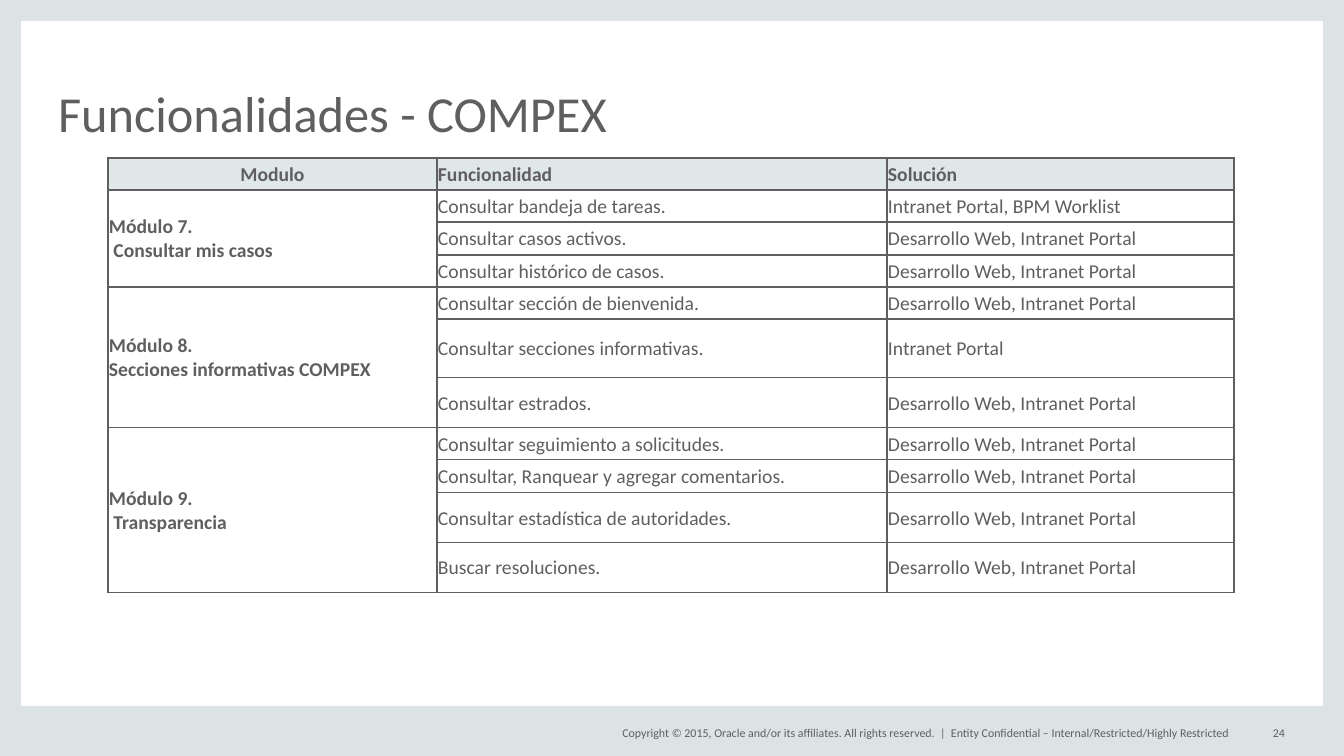
from copy import deepcopy

from lxml import etree
from pptx import Presentation
from pptx import util as u
from pptx.dml.color import RGBColor
from pptx.enum import shapes, text
from pptx.oxml import ns

PX = 914400 / 100.8
WIDTH, HEIGHT = 1344, 756
FONT = "Calibri"
COLORS = {"text": "5F5F5F", "frame": "DCE3E4", "header": "DFE7E9"}

PORTAL = "Intranet Portal"
WEB_PORTAL = f"Desarrollo Web, {PORTAL}"
HEADINGS = ["Modulo", "Funcionalidad", "Solución"]
# Module, then its functions as (function, solution, row height)
MODULES = [
    ("Módulo 7.\v Consultar mis casos", [
        ("Consultar bandeja de tareas.", f"{PORTAL}, BPM Worklist", 32),
        ("Consultar casos activos.", WEB_PORTAL, 33),
        ("Consultar histórico de casos.", WEB_PORTAL, 32),
    ]),
    ("Módulo 8.\vSecciones informativas COMPEX", [
        ("Consultar sección de bienvenida.", WEB_PORTAL, 32),
        ("Consultar secciones informativas.", PORTAL, 59),
        ("Consultar estrados.", WEB_PORTAL, 50),
    ]),
    ("Módulo 9.\v Transparencia", [
        ("Consultar seguimiento a solicitudes.", WEB_PORTAL, 32),
        ("Consultar, Ranquear y agregar comentarios.", WEB_PORTAL, 33),
        ("Consultar estadística de autoridades.", WEB_PORTAL, 50),
        ("Buscar resoluciones.", WEB_PORTAL, 50),
    ]),
]


def px(*lengths):
    return [u.Emu(round(length * PX)) for length in lengths]


def color(name):
    return RGBColor.from_string(COLORS[name])


def write(frame, content, size=14, bold=False, align=text.PP_ALIGN.LEFT, spacing=None):
    para = frame.paragraphs[0]
    para.text = content
    para.alignment = align
    if spacing:
        para.line_spacing = spacing
    for span in para.runs:
        span.font.name = FONT
        span.font.size = u.Pt(size)
        span.font.bold = bold
        span.font.color.rgb = color("text")
    # Line breaks take the same size as the words around them
    for line_break in para._p.findall(ns.qn("a:br")):
        line_break.append(deepcopy(para.runs[0]._r.rPr))


def set_frame(frame, anchor, wrap):
    frame.auto_size = text.MSO_AUTO_SIZE.NONE
    frame.word_wrap = wrap
    frame.vertical_anchor = anchor
    frame.margin_left = frame.margin_right = frame.margin_top = frame.margin_bottom = 0


def add_band(page, *place):
    band = page.shapes.add_shape(shapes.MSO_SHAPE.RECTANGLE, *px(*place))
    band.shadow.inherit = False
    band.fill.solid()
    band.fill.fore_color.rgb = color("frame")
    band.line.fill.background()


def add_title(page, content):
    title = page.shapes.title
    title.left, title.top, title.width, title.height = px(58, 44, 1227, 98)
    set_frame(title.text_frame, text.MSO_ANCHOR.BOTTOM, True)
    write(title.text_frame, content, size=36, spacing=0.8)


def add_footer(page, content, left, width, align=text.PP_ALIGN.LEFT):
    box = page.shapes.add_textbox(*px(left, 723, width, 20))
    set_frame(box.text_frame, text.MSO_ANCHOR.MIDDLE, False)
    write(box.text_frame, content, size=8.5, align=align)


def add_borders(cell):
    props = cell._tc.get_or_add_tcPr()
    for index, side in enumerate(("lnL", "lnR", "lnT", "lnB")):
        line = etree.Element(ns.qn(f"a:{side}"), w=str(u.Pt(1)))
        fill = etree.SubElement(line, ns.qn("a:solidFill"))
        etree.SubElement(fill, ns.qn("a:srgbClr"), val=COLORS["text"])
        props.insert(index, line)


def format_cell(cell, header):
    cell.margin_left, cell.margin_right, cell.margin_top, cell.margin_bottom = px(1, 1, 1, 0)
    cell.vertical_anchor = text.MSO_ANCHOR.MIDDLE
    if header:
        cell.fill.solid()
        cell.fill.fore_color.rgb = color("header")
    else:
        cell.fill.background()
    add_borders(cell)


def add_module_table(page):
    heights = [32] + [height for _, entries in MODULES for _, _, height in entries]
    widths = [329, 450, 347]
    place = px(108, 158, sum(widths), sum(heights))
    table = page.shapes.add_table(len(heights), len(widths), *place).table
    table.first_row = table.horz_banding = False
    for column, width in zip(table.columns, px(*widths)):
        column.width = width
    for number, (row, height) in enumerate(zip(table.rows, px(*heights))):
        row.height = height
        for cell in row.cells:
            format_cell(cell, header=number == 0)

    # Headings
    for index, heading in enumerate(HEADINGS):
        align = text.PP_ALIGN.LEFT if index else text.PP_ALIGN.CENTER
        write(table.cell(0, index).text_frame, heading, bold=True, align=align)

    # Modules, each merged over its functions
    first = 1
    for module, entries in MODULES:
        for number, (function, solution, _) in enumerate(entries, first):
            write(table.cell(number, 1).text_frame, function)
            write(table.cell(number, 2).text_frame, solution)
        table.cell(first, 0).merge(table.cell(first + len(entries) - 1, 0))
        write(table.cell(first, 0).text_frame, module, bold=True)
        first += len(entries)


def main():
    deck = Presentation()
    deck.slide_width, deck.slide_height = px(WIDTH, HEIGHT)
    page = deck.slides.add_slide(deck.slide_layouts[5])

    # Frame
    add_band(page, 0, 0, 21, HEIGHT)
    add_band(page, WIDTH - 21, 0, 21, HEIGHT)
    add_band(page, 0, 706, WIDTH, 50)
    add_band(page, 0, 0, WIDTH, 21)

    # Title and table
    add_title(page, "Funcionalidades - COMPEX")
    add_module_table(page)

    # Footer
    right = text.PP_ALIGN.RIGHT
    add_footer(page, "Copyright © 2015, Oracle and/or its affiliates. All rights reserved.  |",
               593, 353, right)
    add_footer(page, "Entity Confidential – Internal/Restricted/Highly Restricted", 951, 302)
    add_footer(page, "24", 1243, 42, right)

    deck.save("out.pptx")


if __name__ == "__main__":
    main()
